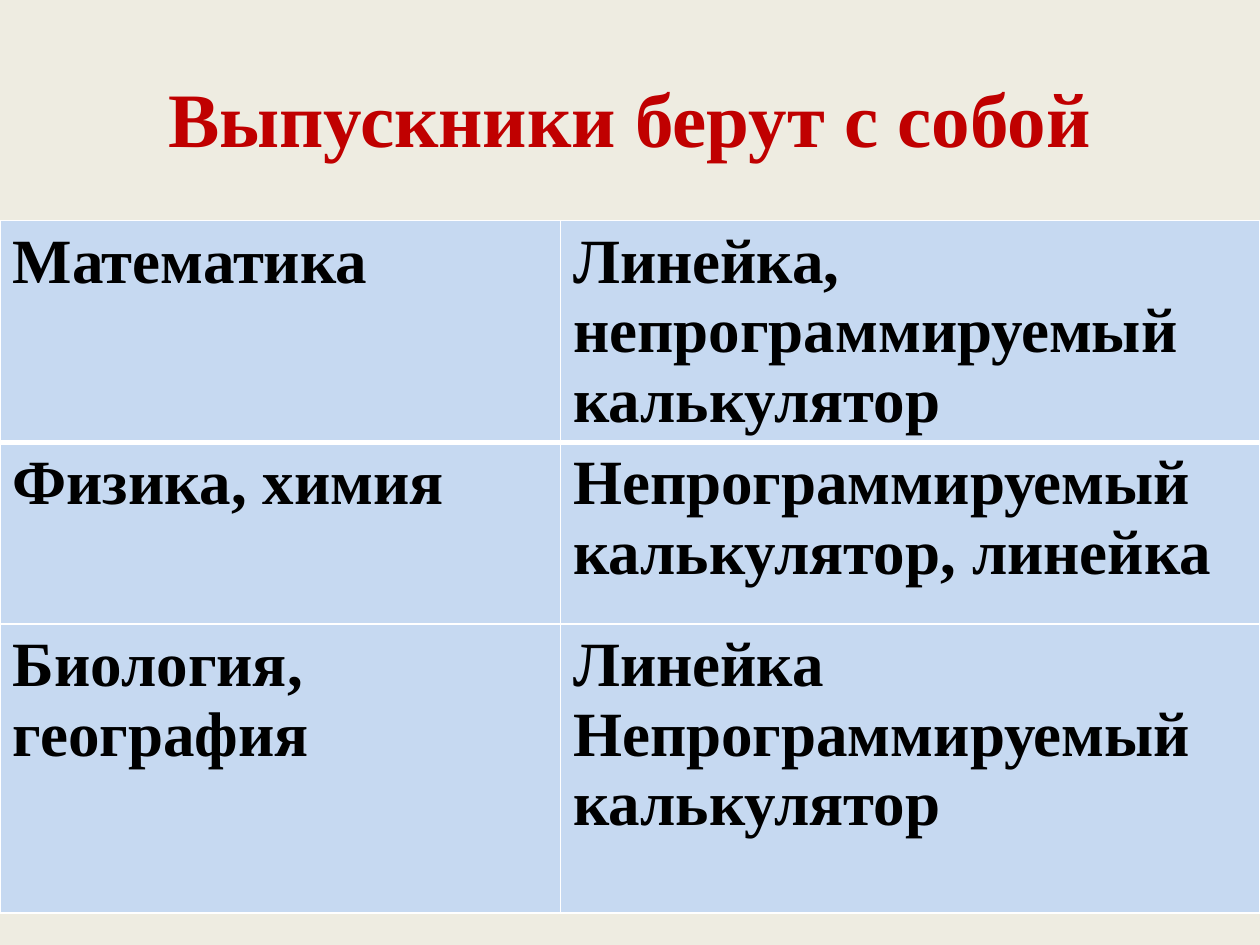
from dataclasses import dataclass

import pptx
import pptx.dml.color
import pptx.enum.text
import pptx.oxml
import pptx.oxml.ns
import pptx.util
from pptx.util import Cm


@dataclass(frozen=True)
class Theme:
    font: str = "Times New Roman"
    background: str = "EEECE1"
    title: str = "C00000"
    text: str = "000000"
    cell: str = "C6D9F1"
    border: str = "FFFFFF"
    title_size: int = 44
    cell_size: int = 36
    thin_border: int = 1
    header_border: int = 3


theme = Theme()


def format_text(text_frame, size, color):
    for paragraph in text_frame.paragraphs:
        for run in paragraph.runs:
            run.font.name = theme.font
            run.font.size = pptx.util.Pt(size)
            run.font.bold = True
            run.font.color.rgb = pptx.dml.color.RGBColor.from_string(color)


def add_border(cell, side, width):
    """Append a border line; side is L, R, T or B, in that order per cell."""
    cell._tc.get_or_add_tcPr().append(pptx.oxml.parse_xml(
        f'<a:ln{side} {pptx.oxml.ns.nsdecls("a")} w="{pptx.util.Pt(width)}">'
        f'<a:solidFill><a:srgbClr val="{theme.border}"/></a:solidFill></a:ln{side}>'
    ))


presentation = pptx.Presentation()
presentation.slide_width = Cm(25.4)
presentation.slide_height = Cm(19.05)
slide = presentation.slides.add_slide(presentation.slide_layouts[5])
slide.background.fill.solid()
slide.background.fill.fore_color.rgb = pptx.dml.color.RGBColor.from_string(theme.background)

title = slide.shapes.title
title.left, title.top, title.width, title.height = Cm(1.27), Cm(0.76), Cm(22.86), Cm(3.18)
title.text_frame.text = "Выпускники берут с собой"
title.text_frame.vertical_anchor = pptx.enum.text.MSO_ANCHOR.MIDDLE
title.text_frame.paragraphs[0].alignment = pptx.enum.text.PP_ALIGN.CENTER
format_text(title.text_frame, theme.title_size, theme.title)

allowed_items = [
    ("Математика", "Линейка, непрограммируемый калькулятор"),
    ("Физика, химия", "Непрограммируемый калькулятор, линейка"),
    ("Биология, география", "Линейка\nНепрограммируемый калькулятор"),
]
column_widths = [11.3, 14.1]
row_heights = [3.07, 3.66, 5.82]

table = slide.shapes.add_table(
    len(row_heights), len(column_widths),
    Cm(0), Cm(4.45), Cm(sum(column_widths)), Cm(sum(row_heights)),
).table
for column, width in zip(table.columns, column_widths):
    column.width = Cm(width)
for row, height in zip(table.rows, row_heights):
    row.height = Cm(height)

for row_index, texts in enumerate(allowed_items):
    for column_index, text in enumerate(texts):
        cell = table.cell(row_index, column_index)
        cell.text_frame.text = text
        format_text(cell.text_frame, theme.cell_size, theme.text)
        add_border(cell, "L", theme.thin_border)
        add_border(cell, "R", theme.thin_border)
        add_border(cell, "T", theme.header_border if row_index == 1 else theme.thin_border)
        add_border(cell, "B", theme.header_border if row_index == 0 else theme.thin_border)
        cell.fill.solid()
        cell.fill.fore_color.rgb = pptx.dml.color.RGBColor.from_string(theme.cell)

presentation.save("out.pptx")
